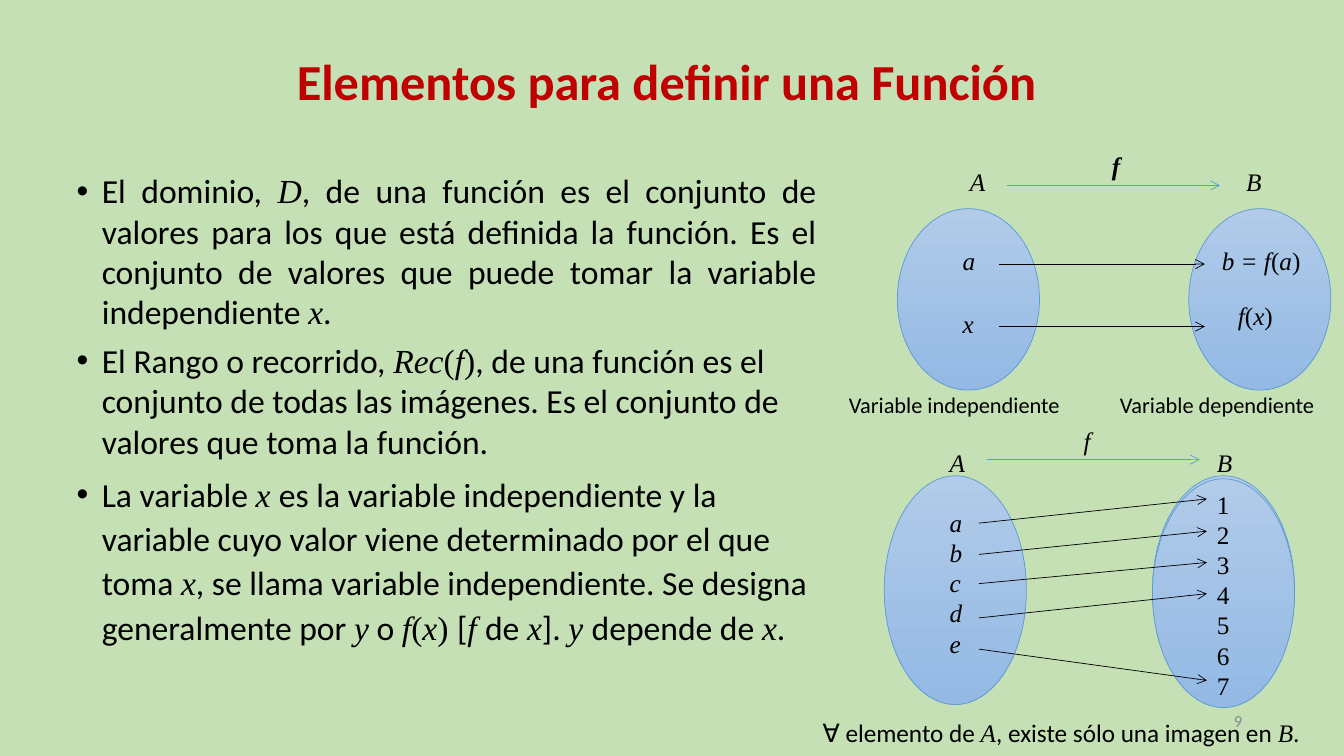
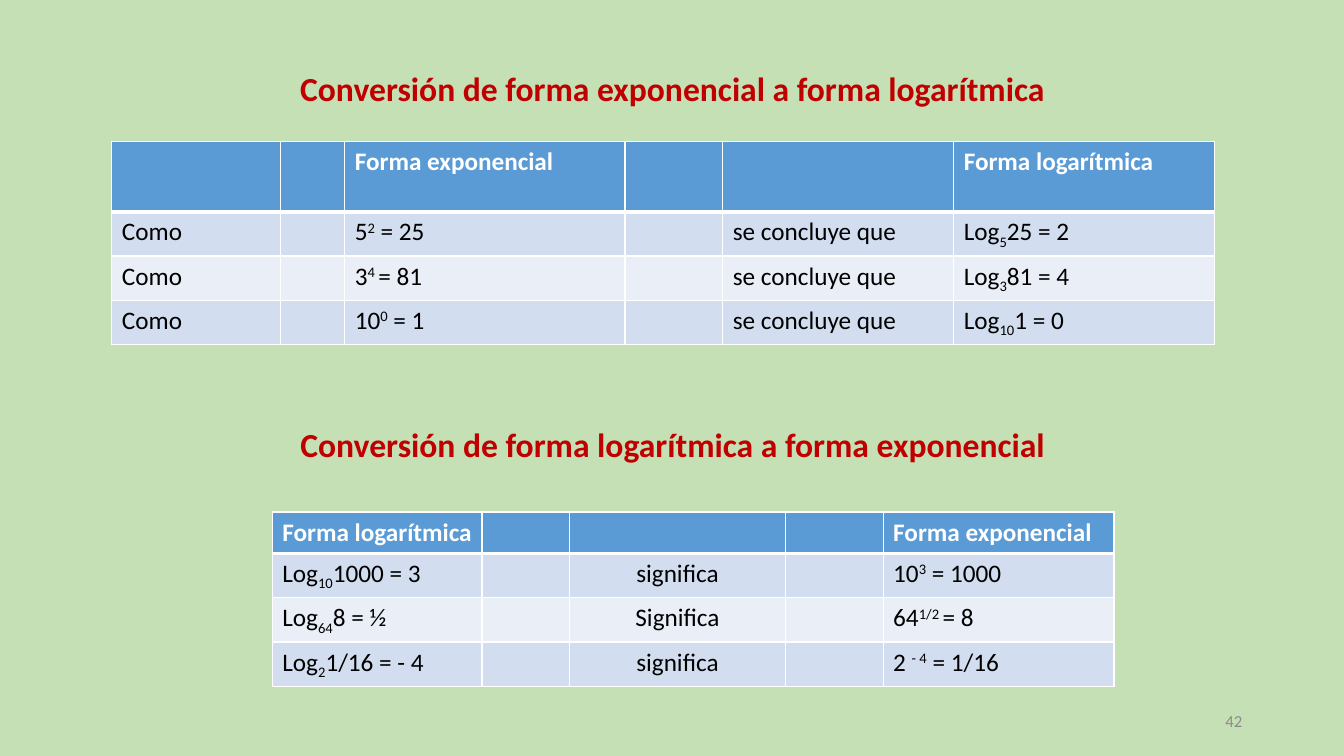
from lxml import etree
from pptx import Presentation
from pptx import util as u
from pptx.dml.color import RGBColor
from pptx.enum import shapes, text
from pptx.oxml.ns import qn

SANS, SERIF = "Calibri", "Times New Roman"
BACK, RED, BLACK, GREY, WHITE = "C5E0B4", "C00000", "000000", "8C8C8C", "FFFFFF"
BLUE, LIGHT, DARK = "5B9BD5", "B1CBE9", "93B9E4"
BANDS = "D2DEEF", "EAEFF7"
BASES = {"^": "30000", "~": "-25000"}
LEFT, MID, RIGHT, JUST = (text.PP_ALIGN.LEFT, text.PP_ALIGN.CENTER,
                          text.PP_ALIGN.RIGHT, text.PP_ALIGN.JUSTIFY)


def tint(code):
    return RGBColor.from_string(code)


def split(line):
    """Yield (mark, words): * italic serif, _ serif, ^ raised, ~ lowered."""
    mark, words = "", ""
    for char in line:
        if char in "*_^~":
            if words:
                yield mark, words
            mark, words = "" if mark == char else char, ""
        else:
            words += char
    if words:
        yield mark, words


def edge(props, side, width, spot):
    line = etree.Element(qn("a:" + side), w=str(u.Pt(width)))
    fill = etree.SubElement(line, qn("a:solidFill"))
    etree.SubElement(fill, qn("a:srgbClr"), val=WHITE)
    props.insert(spot, line)


class Deck:
    """Holds the shared style and the current slide."""

    def __init__(self):
        self.show = Presentation()
        self.show.slide_width = u.Inches(13.33)
        self.show.slide_height = u.Inches(7.5)
        self.slide = None

    def page(self, layout, title, size, high, number):
        self.slide = self.show.slides.add_slide(self.show.slide_layouts[layout])
        fill = self.slide.background.fill
        fill.solid()
        fill.fore_color.rgb = tint(BACK)
        self.head(self.slide.shapes.title, (0.92, 0.4, 11.5, high), title, size)
        self.label((9.42, 6.95, 3, 0.4), [str(number)], SANS, 12, GREY, RIGHT,
                   anchor=text.MSO_ANCHOR.MIDDLE)

    def place(self, shape, at):
        shape.left, shape.top, shape.width, shape.height = map(u.Inches, at)

    def put(self, para, line, name=SANS, size=18, color=BLACK, align=LEFT, bold=False):
        para.alignment = align
        font = para.font
        font.name, font.size, font.bold = name, u.Pt(size), bold
        font.color.rgb = tint(color)
        for mark, words in split(line):
            run = para.add_run()
            run.text = words
            if mark and mark in "*_":
                run.font.name = SERIF
                run.font.italic = mark == "*"
            elif mark:
                run._r.get_or_add_rPr().set("baseline", BASES[mark])

    def fill(self, shape, lines, *style):
        frame = shape.text_frame
        frame.word_wrap = True
        frame.auto_size = text.MSO_AUTO_SIZE.NONE
        for i, line in enumerate(lines):
            para = frame.add_paragraph() if i else frame.paragraphs[0]
            self.put(para, line, *style)
        return frame

    def head(self, shape, at, line, size):
        self.place(shape, at)
        frame = self.fill(shape, [line], SANS, size, RED, MID, True)
        frame.vertical_anchor = text.MSO_ANCHOR.MIDDLE
        frame.paragraphs[0].line_spacing = 0.9

    def second(self, at, line, size):
        self.head(self.slide.shapes.add_textbox(0, 0, 0, 0), at, line, size)

    def label(self, at, lines, name=SERIF, size=18, color=BLACK, align=LEFT,
              bold=False, anchor=text.MSO_ANCHOR.TOP):
        box = self.slide.shapes.add_textbox(*map(u.Inches, at))
        frame = self.fill(box, lines, name, size, color, align, bold)
        frame.vertical_anchor = anchor

    def points(self, at, items):
        body = self.slide.placeholders[1]
        self.place(body, at)
        frame = self.fill(body, [item[0] for item in items], SANS, 24)
        for para, (_, align, space) in zip(frame.paragraphs, items):
            para.alignment, para.line_spacing = align, space
            para.space_before = u.Pt(6)
            props = para._p.get_or_add_pPr()
            props.set("marL", str(u.Inches(0.25)))
            props.set("indent", str(u.Inches(-0.25)))

    def oval(self, x, y, high):
        shape = self.slide.shapes.add_shape(
            shapes.MSO_SHAPE.OVAL, *map(u.Inches, (x, y, 1.41, high)))
        shape.shadow.inherit = False
        shape.fill.gradient()
        shape.fill.gradient_angle = 270
        for stop, code in zip(shape.fill.gradient_stops, (LIGHT, DARK)):
            stop.color.rgb = tint(code)
        shape.line.color.rgb = tint(BLUE)
        shape.line.width = u.Pt(0.5)

    def arrow(self, x1, y1, x2, y2, color=BLACK):
        wire = self.slide.shapes.add_connector(
            shapes.MSO_CONNECTOR.STRAIGHT, *map(u.Inches, (x1, y1, x2, y2)))
        wire.line.color.rgb = tint(color)
        wire.line.width = u.Pt(0.5)
        etree.SubElement(wire.line._get_or_add_ln(), qn("a:tailEnd"), type="arrow")
        etree.SubElement(wire._element.spPr, qn("a:effectLst"))

    def table(self, x, y, cols, top, rows, mids=()):
        highs = [top] + [0.44] * (len(rows) - 1)
        grid = self.slide.shapes.add_table(
            len(rows), len(cols),
            *map(u.Inches, (x, y, sum(cols), sum(highs)))).table
        for col, wide in zip(grid.columns, cols):
            col.width = u.Inches(wide)
        for r, row in enumerate(rows):
            grid.rows[r].height = u.Inches(highs[r])
            for c, line in enumerate(row):
                self.cell(grid.cell(r, c), r, line, MID if c in mids else LEFT)

    def cell(self, cell, r, line, align):
        cell.fill.solid()
        cell.fill.fore_color.rgb = tint(BANDS[(r - 1) % 2] if r else BLUE)
        self.put(cell.text_frame.paragraphs[0], line, SANS, 18,
                 BLACK if r else WHITE, align, r == 0)
        widths = {"lnL": 1, "lnR": 1, "lnT": 3 if r == 1 else 1, "lnB": 1 if r else 3}
        for spot, (side, width) in enumerate(widths.items()):
            edge(cell._tc.get_or_add_tcPr(), side, width, spot)


def parts(deck):
    deck.page(1, "Elementos para definir una Función ", 36, 0.87, 9)
    deck.points((0.66, 1.64, 7.54, 5.61), [
        ("El dominio, *D*, de una función es el conjunto de valores para los que está "
         "definida la función. Es el conjunto de valores que puede tomar la variable "
         "independiente *x*.", JUST, 1),
        ("El Rango o recorrido, *Rec*_(_*f*_)_, de una función es el conjunto de todas "
         "las imágenes. Es el conjunto de valores que toma la función.", LEFT, 1),
        ("La variable *x *es la variable independiente y la variable cuyo valor viene "
         "determinado por el que toma *x*, se llama variable independiente. Se designa "
         "generalmente por *y* o *f*_(_*x*_) _[*f *de *x*]. *y *depende de *x*.",
         LEFT, 1.1)])

    for x in (8.9, 11.79):
        deck.oval(x, 2.07, 1.8)
    for x, y in ((11.43, 4.72), (8.77, 4.72), (11.43, 4.75)):
        deck.oval(x, y, 2.27)

    for x, y, wide, line in (
            (9.52, 1.6, 0.39, "*A*"), (12.26, 1.6, 0.39, "*B*"),
            (9.45, 2.38, 0.31, "*a*"), (9.45, 3.01, 0.31, "*x*"),
            (12.02, 2.38, 1.17, "*b = f*(*a*)"), (12.18, 2.93, 0.7, "*f*(*x*)"),
            (9.32, 4.39, 0.39, "*A*"), (11.97, 4.39, 0.39, "*B*"),
            (10.65, 4.17, 0.39, "*f*")):
        deck.label((x, y, wide, 0.4), [line])
    deck.label((10.93, 1.44, 0.31, 0.4), ["*f*"], bold=True)
    deck.label((9.32, 4.98, 0.39, 1.62), [f"*{c}*" for c in "abcde"])
    deck.label((11.97, 4.8, 0.39, 2.22), "1234567")
    deck.label((8.32, 3.83, 2.4, 0.37), ["Variable independiente"], SANS, 16)
    deck.label((11.01, 3.83, 2.18, 0.37), ["Variable dependiente"], SANS, 16)
    deck.label((8.06, 7.07, 5.13, 0.4),
               ["∀ elemento de *A*, existe sólo una imagen en *B*."], SANS)

    deck.arrow(9.99, 1.84, 12.1, 1.84, BLUE)
    deck.arrow(9.79, 4.56, 11.9, 4.56, BLUE)
    for y in (2.62, 3.24):
        deck.arrow(9.91, y, 11.95, y)
    for y, end in ((5.19, 4.95), (5.5, 5.27), (5.79, 5.58), (6.13, 5.89), (6.44, 6.75)):
        deck.arrow(9.71, y, 11.97, end)


def forms(deck):
    deck.page(5, "Conversión de forma exponencial a forma logarítmica", 24, 1, 42)
    pairs = (("5^2^ = 25", "Log~5~25 = 2"), ("3^4 ^= 81", "Log~3~81 = 4"),
             ("10^0^ = 1", "Log~10~1 = 0"))
    deck.table(1.11, 1.4, (1.67, 0.64, 2.78, 0.97, 2.29, 2.59), 0.7,
               [("", "", "Forma exponencial", "", "", "Forma logarítmica")]
               + [("Como", "", power, "", "se concluye que", log) for power, log in pairs])
    deck.second((0.96, 3.93, 11.5, 1),
                "Conversión de forma logarítmica a forma exponencial ", 24)
    deck.table(2.7, 5.08, (2.08, 0.87, 2.14, 0.97, 2.29), 0.41, [
        ("Forma logarítmica", "", "", "", "Forma exponencial"),
        ("Log~10~1000 = 3", "", "significa", "", "10^3^ = 1000"),
        ("Log~64~8 = ½", "", "Significa", "", "64^1/2 ^= 8"),
        ("Log~2~1/16 = - 4", "", "significa", "", "2 ^- 4^ = 1/16")], mids=(2,))


def main():
    deck = Deck()
    parts(deck)
    forms(deck)
    deck.show.save("out.pptx")


if __name__ == "__main__":
    main()
